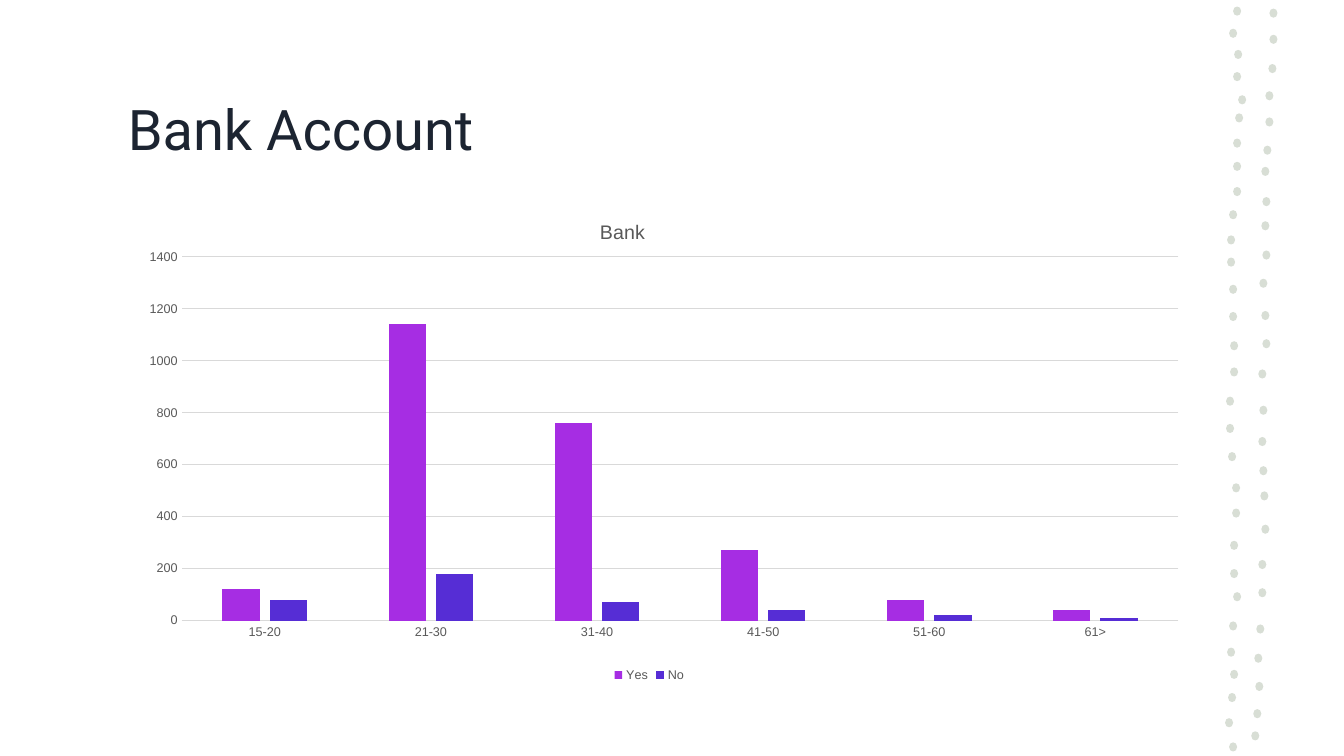
from pptx import Presentation
from pptx.chart.data import CategoryChartData as ChartData
from pptx.dml.color import RGBColor
from pptx.enum.chart import XL_CHART_TYPE as Kind
from pptx.enum.chart import XL_LEGEND_POSITION as Place
from pptx.enum.chart import XL_TICK_MARK as Tick
from pptx.enum.text import MSO_ANCHOR as Anchor
from pptx.oxml import parse_xml
from pptx.oxml.ns import nsdecls, qn
from pptx.util import Inches, Pt

GREY = "595959"
RULE = "D9D9D9"
AGES = ["15-20", "21-30", "31-40", "41-50", "51-60", "61>"]
SERIES = [
    ("Yes", [120, 1140, 760, 270, 80, 40], "A62DE3"),
    ("No", [80, 180, 70, 40, 20, 10], "562DD5"),
]
OVAL = [
    (0.04, 0), (0.04, 0.06), (-0.04, 0.06), (-0.04, 0),
    (-0.04, -0.06), (0.04, -0.06), (0.04, 0),
]
LEFT = [
    (12.27, 0.11), (12.23, 0.33), (12.28, 0.54), (12.27, 0.76), (12.32, 0.99),
    (12.29, 1.17), (12.27, 1.42), (12.27, 1.65), (12.27, 1.9), (12.23, 2.13),
    (12.21, 2.38), (12.21, 2.6), (12.23, 2.87), (12.23, 3.14), (12.24, 3.43),
    (12.24, 3.69), (12.2, 3.98), (12.2, 4.25), (12.22, 4.53), (12.26, 4.84),
    (12.26, 5.09), (12.24, 5.41), (12.24, 5.69), (12.27, 5.92), (12.23, 6.21),
    (12.21, 6.47), (12.24, 6.69), (12.22, 6.92), (12.19, 7.17), (12.23, 7.41),
]
RIGHT = [
    (12.63, 0.13), (12.63, 0.39), (12.62, 0.68), (12.59, 0.95), (12.59, 1.21),
    (12.57, 1.49), (12.55, 1.7), (12.56, 2.0), (12.55, 2.24), (12.56, 2.53),
    (12.53, 2.81), (12.55, 3.13), (12.56, 3.41), (12.52, 3.71), (12.53, 4.07),
    (12.52, 4.38), (12.53, 4.67), (12.54, 4.92), (12.55, 5.25), (12.52, 5.6),
    (12.52, 5.88), (12.5, 6.24), (12.48, 6.53), (12.49, 6.81), (12.47, 7.08),
    (12.45, 7.3),
]


def color(code):
    """Turn a hex string into a colour."""
    return RGBColor.from_string(code)


def style(font, size, code, name="Arial"):
    """Set the size, colour and face of a font."""
    font.size, font.name, font.bold = Pt(size), name, False
    font.color.rgb = color(code)


def write(slide, text, at, **form):
    """Add a text box with one formatted line."""
    box = slide.shapes.add_textbox(*map(Inches, at))
    frame = box.text_frame
    frame.word_wrap = True
    frame.vertical_anchor = Anchor.MIDDLE
    run = frame.paragraphs[0].add_run()
    run.text = text
    style(run.font, **form)


def curve(shape):
    """Turn each three straight segments of an outline into one curve."""
    lines = list(shape._element.iter(qn("a:lnTo")))
    for i in range(0, len(lines), 3):
        bend = parse_xml(f"<a:cubicBezTo {nsdecls('a')}/>")
        lines[i].addprevious(bend)
        for line in lines[i:i + 3]:
            bend.append(line[0])
            line.getparent().remove(line)


def dot(group, x, y):
    """Draw one small oval blob around a centre."""
    ring = [(Inches(x + dx), Inches(y + dy)) for dx, dy in OVAL]
    pen = group.shapes.build_freeform(*ring[0])
    pen.add_line_segments(ring[1:], close=True)
    blob = pen.convert_to_shape()
    curve(blob)
    blob.shadow.inherit = False
    blob.fill.solid()
    blob.fill.fore_color.rgb = color("D8DED5")
    blob.line.fill.background()


def layout(node, index, inner=False, **spots):
    """Give a chart part a fixed place, as shares of the chart."""
    for old in node.findall(qn("c:layout")):
        node.remove(old)
    parts = '<c:layoutTarget val="inner"/>' if inner else ""
    parts += "".join(f'<c:{k}Mode val="edge"/>' for k in ("x", "y"))
    parts += "".join(f'<c:{k} val="{v}"/>' for k, v in spots.items())
    head = f"<c:layout {nsdecls('c')}><c:manualLayout>"
    node.insert(index, parse_xml(f"{head}{parts}</c:manualLayout></c:layout>"))


def rule(line):
    """Make a line thin and pale."""
    line.color.rgb = color(RULE)
    line.width = Pt(0.75)


def axes(chart):
    """Format both axes and the grid."""
    cats, vals = chart.category_axis, chart.value_axis
    for axis in (cats, vals):
        axis.major_tick_mark = axis.minor_tick_mark = Tick.NONE
        style(axis.tick_labels.font, 9, GREY)
    rule(cats.format.line)
    vals.format.line.fill.background()
    vals.minimum_scale, vals.maximum_scale, vals.major_unit = 0, 1400, 200
    rule(vals.major_gridlines.format.line)


def columns(slide, at):
    """Add the column chart of accounts by age."""
    data = ChartData()
    data.categories = AGES
    for name, vals, _ in SERIES:
        data.add_series(name, vals)
    frame = slide.shapes.add_chart(Kind.COLUMN_CLUSTERED, *map(Inches, at), data)
    chart = frame.chart
    style(chart.font, 10, "000000")
    plot = chart.plots[0]
    plot.gap_width, plot.overlap, plot.vary_by_categories = 219, -27, False
    for part, (_, _, code) in zip(plot.series, SERIES):
        part.format.fill.solid()
        part.format.fill.fore_color.rgb = color(code)
    axes(chart)
    chart.has_legend = True
    chart.legend.position = Place.BOTTOM
    chart.legend.include_in_layout = False
    style(chart.legend.font, 9, GREY)
    chart.has_title = True
    title = chart.chart_title
    title.include_in_layout = False
    run = title.text_frame.paragraphs[0].add_run()
    run.text = "Bank"
    style(run.font, 14, GREY)
    layout(title._element, 1, x=0.45, y=0.02)
    area = chart._chartSpace.chart.plotArea
    layout(area, 0, inner=True, x=0.06, y=0.105, w=0.938, h=0.758)


def main():
    """Build and save the slide."""
    deck = Presentation()
    deck.slide_width, deck.slide_height = Inches(13.33), Inches(7.5)
    slide = deck.slides.add_slide(deck.slide_layouts[6])
    dots = slide.shapes.add_group_shape()
    for x, y in LEFT + RIGHT:
        dot(dots, x, y)
    write(slide, "Bank Account", (1.17, 0.55, 10.54, 1.45),
          size=40, code="1C2431", name="Roboto")
    columns(slide, (1.17, 2.05, 10.54, 4.76))
    deck.save("out.pptx")


if __name__ == "__main__":
    main()
